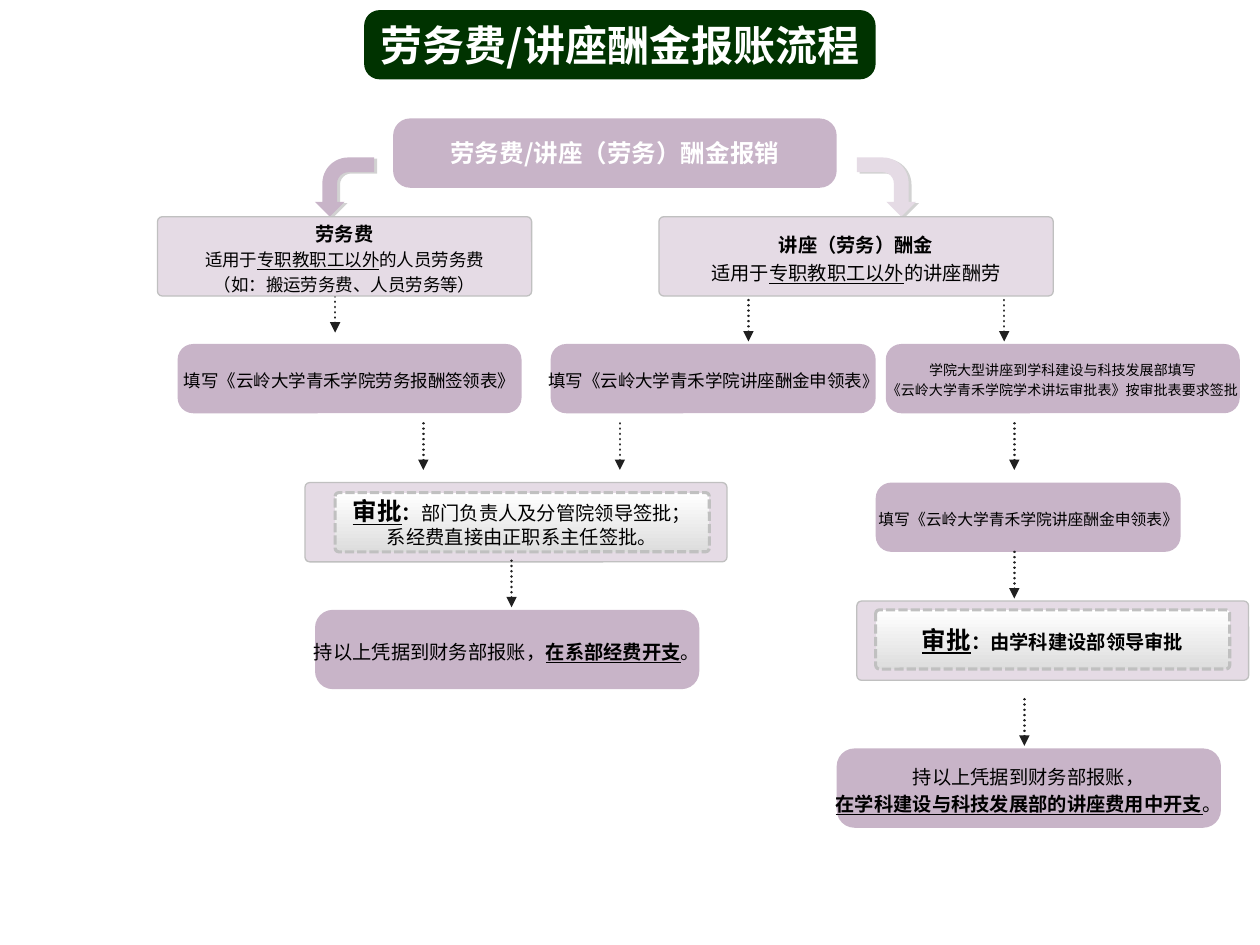
from typing import NamedTuple

from lxml import etree
from pptx import Presentation
from pptx.dml.color import RGBColor
from pptx.enum.dml import MSO_LINE
from pptx.enum.shapes import MSO_CONNECTOR, MSO_SHAPE
from pptx.enum.text import MSO_ANCHOR, MSO_AUTO_SIZE, PP_ALIGN
from pptx.oxml.ns import qn
from pptx.util import Inches, Pt

ROUNDED = MSO_SHAPE.ROUNDED_RECTANGLE
BENT_ARROW = MSO_SHAPE.BENT_ARROW
STRAIGHT = MSO_CONNECTOR.STRAIGHT
DASH, DOT = MSO_LINE.SQUARE_DOT, MSO_LINE.ROUND_DOT
MIDDLE, CENTER, NO_FIT = MSO_ANCHOR.MIDDLE, PP_ALIGN.CENTER, MSO_AUTO_SIZE.NONE
TITLE_ONLY = 5

FONT = "Noto Sans CJK SC"
COLORS = {
    "title": "003300", "step": "C8B4C8", "panel": "E5DBE5", "border": "C0C0C0",
    "white": "FFFFFF", "silver": "DDDDDD", "black": "000000",
    "arrow": "202020", "shadow": "808080",
}
ARROW_LENGTH = 0.37
BEND_SIZE = 0.47
TITLE_MARGIN = 0.3


class Span(NamedTuple):
    text: str
    size: float
    bold: bool = False
    underline: bool = False
    color: str = "black"


class Box(NamedTuple):
    left: float
    top: float
    width: float
    height: float
    kind: str
    paras: tuple[tuple[Span, ...], ...] = ()
    spacing: float = 1.2
    corner: float = 0.225


class Bend(NamedTuple):
    left: float
    top: float
    color: str
    mirrored: bool


BANNER = Box(2.89, 0.08, 4.06, 0.55, "title")
# The title reaches past its banner on both sides so that it stays on one line
TITLE = Box(BANNER.left - TITLE_MARGIN, BANNER.top, BANNER.width + 2 * TITLE_MARGIN,
            BANNER.height, "title",
            ((Span("劳务费/讲座酬金报账流程", 24, True, color="white"),),), 1)

# Flow steps, back to front
STEPS = [
    Box(3.12, 0.94, 3.52, 0.55, "step",
        ((Span("劳务费/讲座（劳务）酬金报销", 14, True, color="white"),),), 1, 0.244),
    Box(2.5, 4.84, 3.05, 0.63, "step",
        ((Span("持以上凭据到财务部报账，", 11), Span("在系部经费开支", 11, True, True),
          Span("。", 11)),)),
    Box(2.42, 3.83, 3.35, 0.63, "panel"),
    Box(2.66, 3.91, 2.97, 0.47, "approval",
        ((Span("审批", 14, True, True), Span("：", 11, True),
          Span("部门负责人及分管院领导签批；", 11)),
         (Span("系经费直接由正职系主任签批。", 11),)), 1),
    Box(1.41, 2.73, 2.73, 0.55, "step",
        ((Span("填写《云岭大学青禾学院劳务报酬签领表》", 10),),)),
    Box(4.37, 2.73, 2.58, 0.55, "step",
        ((Span("填写《云岭大学青禾学院讲座酬金申领表", 10), Span("》", 9)),)),
    Box(7.03, 2.73, 2.81, 0.55, "step",
        ((Span("学院大型讲座到学科建设与科技发展部填写", 8),),
         (Span("《云岭大学青禾学院学术讲坛审批表》按审批表要求签批", 8),))),
    Box(6.95, 3.83, 2.42, 0.55, "step",
        ((Span("填写《云岭大学青禾学院讲座酬金申领表》", 9),),)),
    Box(6.8, 4.77, 3.11, 0.63, "panel"),
    Box(6.95, 4.84, 2.81, 0.47, "approval",
        ((Span("审批", 14, True, True), Span("：由学科建设部领导审批", 11, True)),), 1),
    Box(6.64, 5.94, 3.05, 0.63, "step",
        ((Span("持以上凭据到财务部报账，", 11),),
         (Span("在学科建设与科技发展部的讲座费用中开支", 11, True, True), Span("。", 11)))),
]

# Branch headings, drawn over the arrows
BRANCHES = [
    Box(5.23, 1.72, 3.13, 0.63, "panel",
        ((Span("讲座（劳务）酬金", 11, True),),
         (Span("适用于", 11), Span("专职教职工以外", 11, underline=True),
          Span("的讲座酬劳", 11)))),
    Box(1.25, 1.72, 2.97, 0.63, "panel",
        ((Span("劳务费", 11, True),),
         (Span("适用于", 10), Span("专职教职工以外", 10, underline=True),
          Span("的人员劳务费", 10)),
         (Span("（如：搬运劳务费、人员劳务等）", 10),))),
]

BENDS = [Bend(2.5, 1.25, "step", True), Bend(6.8, 1.25, "panel", False)]

# Centre and top of each downward arrow
ARROWS = [(2.66, 2.27), (5.94, 2.34), (7.97, 2.34), (3.36, 3.36), (4.92, 3.36),
          (8.05, 3.36), (4.06, 4.45), (8.05, 4.38), (8.13, 5.55)]


def rgb(name: str) -> RGBColor:
    return RGBColor.from_string(COLORS[name])


def write_text(shape, box: Box) -> None:
    frame = shape.text_frame
    frame.auto_size = NO_FIT
    frame.word_wrap = False
    frame.vertical_anchor = MIDDLE
    for index, spans in enumerate(box.paras):
        para = frame.add_paragraph() if index else frame.paragraphs[0]
        para.alignment = CENTER
        para.line_spacing = box.spacing
        for span in spans:
            run = para.add_run()
            run.text = span.text
            font = run.font
            font.size, font.bold, font.underline = Pt(span.size), span.bold, span.underline
            font.color.rgb = rgb(span.color)
            font.name = FONT
            east_asian = etree.SubElement(font._element, qn("a:ea"))
            east_asian.set("typeface", FONT)


def style_box(shape, kind: str) -> None:
    if kind == "approval":
        shape.fill.gradient()
        shape.fill.gradient_angle = 270
        for stop, name in zip(shape.fill.gradient_stops, ("white", "silver")):
            stop.color.rgb = rgb(name)
    else:
        shape.fill.solid()
        shape.fill.fore_color.rgb = rgb(kind)
    if kind in ("panel", "approval"):
        shape.line.color.rgb = rgb("border")
        shape.line.width = Pt(0.75 if kind == "panel" else 1.75)
        if kind == "approval":
            shape.line.dash_style = DASH
    else:
        shape.line.fill.background()


def add_box(page, box: Box):
    shape = page.shapes.add_shape(ROUNDED, *map(Inches, box[:4]))
    shape.shadow.inherit = False
    shape.adjustments[0] = 0.062 if box.kind in ("panel", "approval") else box.corner
    style_box(shape, box.kind)
    if box.paras:
        write_text(shape, box)
    return shape


def add_title(page) -> None:
    title = page.shapes.title
    title.left, title.top, title.width, title.height = map(Inches, TITLE[:4])
    frame = title.text_frame
    frame.margin_left = frame.margin_right = frame.margin_top = frame.margin_bottom = 0
    write_text(title, TITLE)
    # The banner goes behind the title
    title._element.addprevious(add_box(page, BANNER)._element)


def add_bend(page, bend: Bend) -> None:
    shape = page.shapes.add_shape(BENT_ARROW, Inches(bend.left), Inches(bend.top),
                                  Inches(BEND_SIZE), Inches(BEND_SIZE))
    shape.rotation = 90
    if bend.mirrored:
        shape._element.spPr.find(qn("a:xfrm")).set("flipV", "1")
    style_box(shape, bend.color)
    shape.line.fill.background()
    # Hard offset shadow
    effects = etree.SubElement(shape._element.spPr, qn("a:effectLst"))
    shadow = etree.SubElement(effects, qn("a:outerShdw"), blurRad="0", dist=str(Pt(1.8)),
                              dir=str(24 * 60000), rotWithShape="0")
    color = etree.SubElement(shadow, qn("a:srgbClr"), val=COLORS["shadow"])
    etree.SubElement(color, qn("a:alpha"), val="35000")


def add_arrow(page, center: float, top: float) -> None:
    line = page.shapes.add_connector(STRAIGHT, Inches(center), Inches(top),
                                     Inches(center), Inches(top + ARROW_LENGTH))
    line.line.color.rgb = rgb("arrow")
    line.line.width = Pt(1.5)
    line.line.dash_style = DOT
    outline = line.line._get_or_add_ln()
    outline.set("cap", "rnd")
    etree.SubElement(outline, qn("a:tailEnd"), type="triangle")
    etree.SubElement(line._element.spPr, qn("a:effectLst"))


def main() -> None:
    deck = Presentation()
    deck.slide_width, deck.slide_height = Inches(10), Inches(7.5)
    page = deck.slides.add_slide(deck.slide_layouts[TITLE_ONLY])
    add_title(page)
    for box in STEPS:
        add_box(page, box)
    for bend in BENDS:
        add_bend(page, bend)
    for center, top in ARROWS:
        add_arrow(page, center, top)
    for box in BRANCHES:
        add_box(page, box)
    deck.save("out.pptx")


if __name__ == "__main__":
    main()
